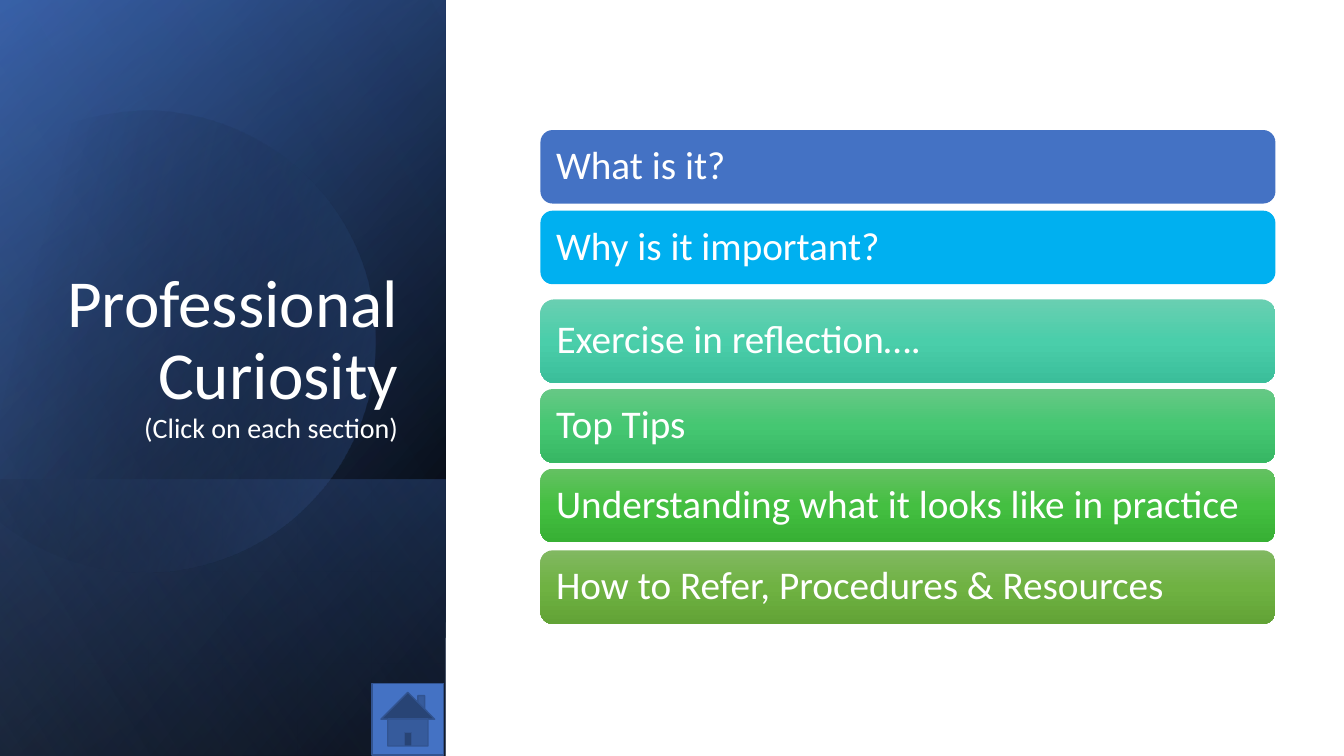
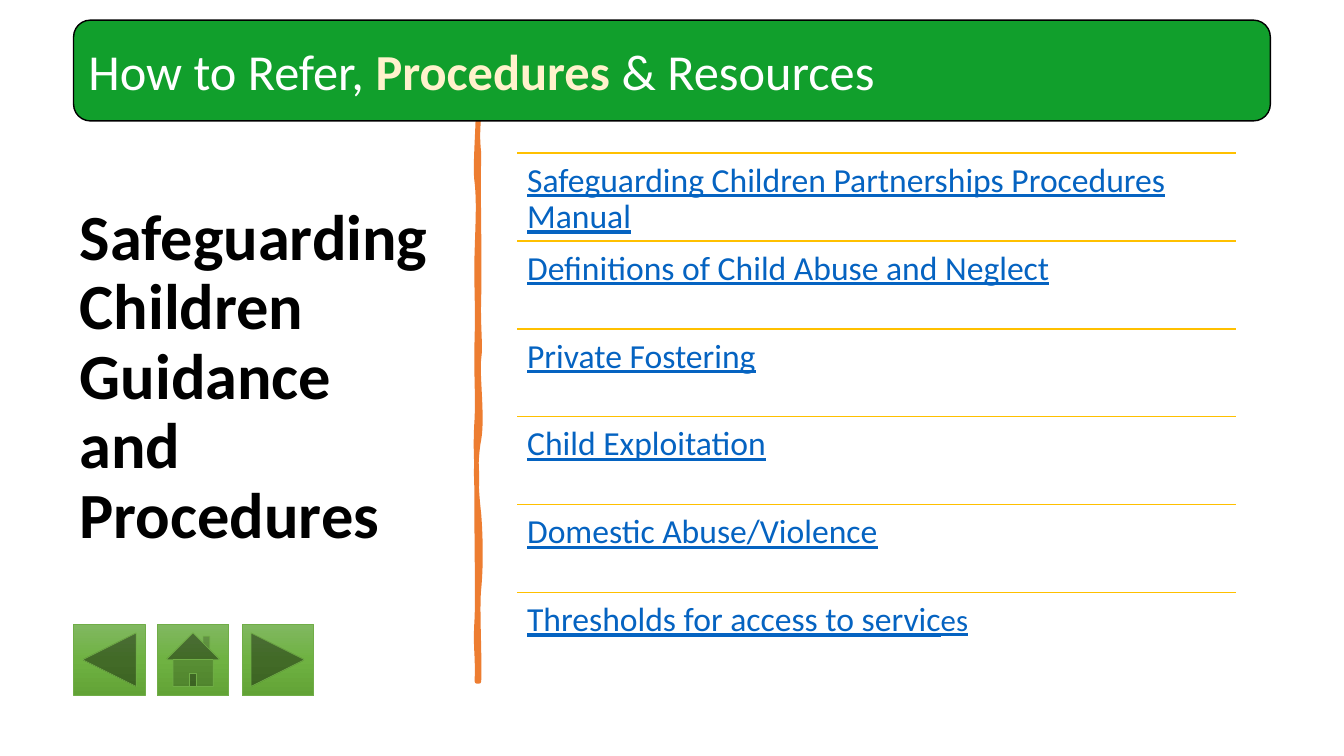
"""Build the two Professional Curiosity slides."""
from dataclasses import dataclass
from typing import NamedTuple

from lxml import etree
from pptx import Presentation
from pptx.dml.color import RGBColor
from pptx.enum.shapes import MSO_CONNECTOR, MSO_SHAPE
from pptx.enum.text import MSO_ANCHOR, PP_ALIGN
from pptx.oxml.ns import qn
from pptx.util import Emu, Pt

RECTANGLE = MSO_SHAPE.RECTANGLE
ROUNDED = MSO_SHAPE.ROUNDED_RECTANGLE
HOME = MSO_SHAPE.ACTION_BUTTON_HOME
NEXT = MSO_SHAPE.ACTION_BUTTON_FORWARD_OR_NEXT
BACK = MSO_SHAPE.ACTION_BUTTON_BACK_OR_PREVIOUS
STRAIGHT = MSO_CONNECTOR.STRAIGHT
LEFT, RIGHT = PP_ALIGN.LEFT, PP_ALIGN.RIGHT
TOP, MIDDLE, BOTTOM = MSO_ANCHOR.TOP, MSO_ANCHOR.MIDDLE, MSO_ANCHOR.BOTTOM

EMU_PER_PX = 9144
SLIDE_WIDTH, SLIDE_HEIGHT = 1333, 750
TITLE_ONLY_LAYOUT = 5
FONT = "Calibri"
WHITE, BLACK = "FFFFFF", "000000"
BLUE, BLUE_EDGE = "4472C4", "325491"
ORANGE, GOLD, LINK = "ED7D31", "FFC000", "0563C1"
HEADER_GREEN, CREAM, GREEN_EDGE = "119F2C", "FFF2CC", "70AD47"
BUTTON_SIZE = 71

Point = tuple[int, int]
Step = tuple[Point, ...]


class Frame(NamedTuple):
    """Place and size in px."""
    left: float
    top: float
    width: float
    height: float


class Stop(NamedTuple):
    """Gradient stop with percentages for place and opacity."""
    place: int
    color: str
    opacity: int = 100


class Gradient(NamedTuple):
    """Linear gradient with its clockwise angle in degrees."""
    angle: int
    stops: tuple[Stop, ...]


class Edge(NamedTuple):
    """Outline colour and width in points."""
    color: str
    width: float


class Span(NamedTuple):
    """Stretch of text and what sets it apart from its paragraph."""
    text: str
    size: int | None = None
    color: str | None = None
    bold: bool | None = None


@dataclass(frozen=True)
class TextStyle:
    """Look of one paragraph and of the frame around it."""
    size: int
    color: str
    bold: bool = False
    underline: bool = False
    align: PP_ALIGN = LEFT
    anchor: MSO_ANCHOR = MIDDLE
    spacing: float = 0.9
    inset: int | None = None


@dataclass(frozen=True)
class Section:
    """Bar of the contents menu."""
    label: str
    top: int
    fill: str | Gradient
    height: int = 73


@dataclass(frozen=True)
class Button:
    """Navigation button."""
    kind: MSO_SHAPE
    left: int
    top: int
    fill: str | Gradient
    edge: Edge


def sheen(light: str, middle: str, dark: str) -> Gradient:
    """Return a gradient running from top to bottom."""
    return Gradient(90, (Stop(0, light), Stop(50, middle), Stop(100, dark)))


LEAF = sheen("81B861", "6FB242", "62A336")
LEAF_EDGE = Edge(GREEN_EDGE, 0.5)
BACKDROP = Frame(0, 0, SLIDE_WIDTH, SLIDE_HEIGHT)
PANEL = Frame(0, 0, 442, SLIDE_HEIGHT)
PANEL_FOOT = Frame(0, 476, 442, 274)
PANEL_BASE = (
    (PANEL, Gradient(50, (Stop(8, BLACK), Stop(100, "2F5597")))),
    (PANEL, Gradient(30, (Stop(0, BLACK, 0), Stop(99, BLUE, 46)))),
    (PANEL_FOOT, Gradient(130, (Stop(2, BLUE, 29), Stop(100, BLACK, 30)))),
)
PANEL_GLAZE = Gradient(120, (Stop(0, BLACK, 0), Stop(99, "8FAADC", 11)))
DISC_FILL = Gradient(30, (Stop(29, BLACK, 0), Stop(100, BLUE, 43)))
DISC_TURN = 343.9
DISC = (
    ((212, 116),),
    ((304, 145), (372, 232), (372, 334)),
    ((371, 461), (269, 563), (143, 563)),
    ((64, 563), (-6, 523), (-47, 462)),
    ((-55, 448),),
    ((36, 133),),
    ((54, 124),),
    ((82, 112), (112, 106), (143, 106)),
    ((167, 106), (190, 110), (212, 116)),
)

SECTIONS = (
    Section("What is it?", 129, BLUE),
    Section("Why is it important?", 209, "00B0F0"),
    Section("Exercise in reflection….", 297, sheen("69CFB1", "4ACEAA", "3BBE9A"), 83),
    Section("Top Tips", 386, sheen("66C885", "45C772", "37B764")),
    Section("Understanding what it looks like in practice", 465,
            sheen("64C162", "44BF41", "37B034")),
    Section("How to Refer, Procedures & Resources", 546, LEAF),
)
MENU_LEFT, MENU_WIDTH = 536, 729

GUIDANCE = (
    (Span("Safeguarding Children Partnerships Procedures Manual"),),
    (Span("Definitions of Child Abuse and Neglect"),),
    (Span("Private Fostering"),),
    (Span("Child Exploitation"),),
    (Span("Domestic Abuse/Violence"),),
    (Span("Thresholds for access to servic"), Span("es", size=22)),
)
GUIDANCE_LEFT, GUIDANCE_TOP, GUIDANCE_WIDTH = 513, 152, 713
GUIDANCE_BOTTOM = 675

DIVIDER = (
    ((475, 84),),
    ((477, 115), (472, 125), (475, 152)),
    ((474, 200), (476, 255), (475, 294)),
    ((474, 325), (477, 342), (475, 356)),
    ((473, 370), (479, 414), (475, 436)),
    ((471, 457), (472, 484), (475, 510)),
    ((477, 536), (477, 564), (475, 584)),
    ((473, 603), (476, 650), (475, 676)),
    ((473, 676),),
    ((474, 646), (471, 644), (473, 613)),
    ((474, 583), (472, 495), (473, 477)),
    ((473, 459), (471, 445), (473, 415)),
    ((474, 386), (472, 373), (473, 335)),
    ((474, 298), (472, 281), (473, 250)),
    ((474, 218), (475, 200), (473, 181)),
    ((470, 163), (477, 104), (473, 84)),
)

COVER_TITLE = TextStyle(48, WHITE, align=RIGHT, anchor=BOTTOM)
TOPIC_TITLE = TextStyle(46, BLACK, bold=True)
MENU_TEXT = TextStyle(28, WHITE, inset=12)
LINK_TEXT = TextStyle(24, LINK, underline=True, anchor=TOP, inset=10)
HEADER_TEXT = TextStyle(36, WHITE, spacing=1.0)


def px(length: float) -> Emu:
    """Turn px into EMU."""
    return Emu(round(length * EMU_PER_PX))


def box(frame: Frame) -> tuple[Emu, ...]:
    """Turn a frame into EMU."""
    return tuple(px(length) for length in frame)


def rgb(color: str) -> RGBColor:
    """Turn a hex string into a colour."""
    return RGBColor.from_string(color)


def paint(shape, fill: str | Gradient, edge: Edge | None = None) -> None:
    """Set fill and outline and drop the shadow."""
    shape.shadow.inherit = False
    shape.fill.solid()
    if isinstance(fill, str):
        shape.fill.fore_color.rgb = rgb(fill)
    else:
        gradient = etree.Element(qn("a:gradFill"), rotWithShape="1")
        stops = etree.SubElement(gradient, qn("a:gsLst"))
        for stop in fill.stops:
            mark = etree.SubElement(stops, qn("a:gs"), pos=str(stop.place * 1000))
            color = etree.SubElement(mark, qn("a:srgbClr"), val=stop.color)
            if stop.opacity < 100:
                etree.SubElement(color, qn("a:alpha"), val=str(stop.opacity * 1000))
        etree.SubElement(gradient, qn("a:lin"), ang=str(fill.angle * 60000), scaled="0")
        properties = shape.element.spPr
        properties.replace(properties.find(qn("a:solidFill")), gradient)
    if edge is None:
        shape.line.fill.background()
    else:
        shape.line.color.rgb = rgb(edge.color)
        shape.line.width = Pt(edge.width)


def write(shape, lines: tuple[tuple[Span, ...], ...], style: TextStyle) -> None:
    """Write one paragraph whose lines are parted by line breaks."""
    frame = shape.text_frame
    frame.word_wrap = True
    frame.vertical_anchor = style.anchor
    if style.inset is not None:
        frame.margin_left = frame.margin_right = px(style.inset)
        frame.margin_top = frame.margin_bottom = px(style.inset)
    paragraph = frame.paragraphs[0]
    paragraph.alignment, paragraph.line_spacing = style.align, style.spacing
    font = paragraph.font
    font.name, font.size, font.color.rgb = FONT, Pt(style.size), rgb(style.color)
    font.bold, font.underline = style.bold, style.underline
    for index, line in enumerate(lines):
        if index:
            paragraph.add_line_break()
        for span in line:
            run = paragraph.add_run()
            run.text = span.text
            if span.size:
                run.font.size = Pt(span.size)
            if span.color:
                run.font.color.rgb = rgb(span.color)
            if span.bold is not None:
                run.font.bold = span.bold


def set_title(slide, frame: Frame, lines: tuple[tuple[Span, ...], ...],
              style: TextStyle) -> None:
    """Place the title above all that is drawn so far and fill it."""
    title = slide.shapes.title
    title.left, title.top, title.width, title.height = box(frame)
    title.element.getparent().append(title.element)
    write(title, lines, style)


def add_outline(slide, steps: tuple[Step, ...], fill: str | Gradient,
                edge: Edge | None = None, turn: float = 0) -> None:
    """Draw a closed outline; a step of three points is a curve."""
    start, *others = [(px(x), px(y)) for step in steps for x, y in step]
    builder = slide.shapes.build_freeform(*start, scale=1.0)
    builder.add_line_segments(others, close=True)
    outline = builder.convert_to_shape()
    pieces = iter(list(outline.element.iter(qn("a:lnTo"))))
    for step in steps[1:]:
        first, *rest = [next(pieces) for _ in step]
        if rest:
            first.tag = qn("a:cubicBezTo")
        for piece in rest:
            first.append(piece[0])
            piece.getparent().remove(piece)
    outline.rotation = turn
    paint(outline, fill, edge)


def add_panel_layer(slide, frame: Frame, fill: Gradient) -> None:
    """Draw a mirrored rectangle, turned a quarter, that covers the frame."""
    left = frame.left + (frame.width - frame.height) / 2
    top = frame.top + (frame.height - frame.width) / 2
    turned = Frame(left, top, frame.height, frame.width)
    layer = slide.shapes.add_shape(RECTANGLE, *box(turned))
    layer.rotation = 90
    layer.element.spPr.find(qn("a:xfrm")).set("flipH", "1")
    paint(layer, fill)


def add_bar(slide, frame: Frame, spans: tuple[Span, ...], style: TextStyle,
            fill: str | Gradient, edge: Edge | None = None) -> None:
    """Draw a rounded bar with text."""
    bar = slide.shapes.add_shape(ROUNDED, *box(frame))
    paint(bar, fill, edge)
    write(bar, (spans,), style)


def add_button(slide, button: Button) -> None:
    """Draw a navigation button."""
    frame = Frame(button.left, button.top, BUTTON_SIZE, BUTTON_SIZE)
    paint(slide.shapes.add_shape(button.kind, *box(frame)), button.fill, button.edge)


def add_guidance(slide, frame: Frame, spans: tuple[Span, ...]) -> None:
    """Draw one guidance entry below its rule."""
    left, top, width, _ = box(frame)
    rule = slide.shapes.add_connector(STRAIGHT, left, top, left + width, top)
    rule.line.color.rgb = rgb(GOLD)
    rule.line.width = Pt(1)
    etree.SubElement(rule.element.spPr, qn("a:effectLst"))
    write(slide.shapes.add_textbox(*box(frame)), (spans,), LINK_TEXT)


def build_menu(slide) -> None:
    """Build the contents menu."""
    paint(slide.shapes.add_shape(RECTANGLE, *box(BACKDROP)), WHITE)
    for frame, fill in PANEL_BASE:
        add_panel_layer(slide, frame, fill)
    add_outline(slide, DISC, DISC_FILL, turn=DISC_TURN)
    add_panel_layer(slide, PANEL, PANEL_GLAZE)
    set_title(slide, Frame(37, 184, 368, 262),
              ((Span("Professional Curiosity"),),
               (Span("(Click on each section)", size=20),)), COVER_TITLE)
    for section in SECTIONS:
        frame = Frame(MENU_LEFT, section.top, MENU_WIDTH, section.height)
        add_bar(slide, frame, (Span(section.label),), MENU_TEXT, section.fill)
    add_button(slide, Button(HOME, 369, 678, BLUE, Edge(BLUE_EDGE, 1)))


def build_procedures(slide) -> None:
    """Build the list of guidance and procedures."""
    set_title(slide, Frame(69, 70, 374, 611),
              ((Span("Safeguarding Children Guidance and Procedures"),),), TOPIC_TITLE)
    add_outline(slide, DIVIDER, ORANGE, Edge(ORANGE, 3.25))
    pitch = (GUIDANCE_BOTTOM - GUIDANCE_TOP) / len(GUIDANCE)
    for index, spans in enumerate(GUIDANCE):
        top = GUIDANCE_TOP + index * pitch
        add_guidance(slide, Frame(GUIDANCE_LEFT, top, GUIDANCE_WIDTH, pitch), spans)
    add_bar(slide, Frame(73, 20, 1187, 100),
            (Span("How to Refer, "), Span("Procedures", color=CREAM, bold=True),
             Span(" & Resources")), HEADER_TEXT, HEADER_GREEN, Edge(BLACK, 1))
    for left, kind in ((73, BACK), (156, HOME), (240, NEXT)):
        add_button(slide, Button(kind, left, 619, LEAF, LEAF_EDGE))


def main() -> None:
    """Build and save the presentation."""
    deck = Presentation()
    deck.slide_width, deck.slide_height = px(SLIDE_WIDTH), px(SLIDE_HEIGHT)
    for build in (build_menu, build_procedures):
        build(deck.slides.add_slide(deck.slide_layouts[TITLE_ONLY_LAYOUT]))
    deck.save("out.pptx")


if __name__ == "__main__":
    main()
